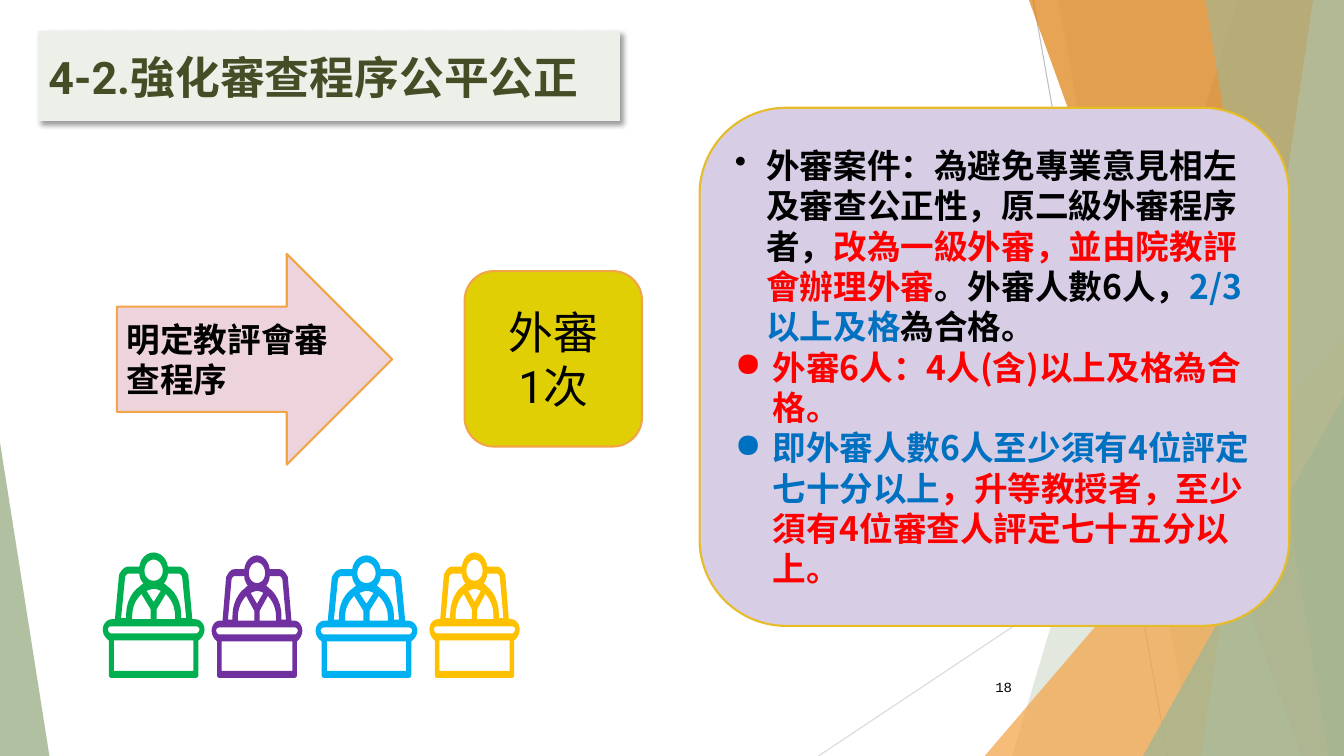
"""Builds the slide on fair procedure for external reviews."""
from lxml.etree import SubElement
from pptx import Presentation
from pptx.dml.color import RGBColor
from pptx.enum.shapes import MSO_CONNECTOR, MSO_SHAPE
from pptx.enum.text import MSO_ANCHOR, MSO_AUTO_SIZE, PP_ALIGN
from pptx.oxml.ns import qn
from pptx.util import Pt

WIDTH, HEIGHT = 960, 540
COLORS = {
    "black": "000000", "red": "FF0000", "blue": "0070C0", "olive": "444D26",
    "sage": "A5B592", "pale sage": "C9D3BE", "amber": "F3A447", "orange": "DD7E0E",
    "mist": "EDF0E9", "pink": "ECD3DC", "mustard": "DFCF04", "lilac": "D7CEE6",
    "gold": "E7BC29", "grey": "BFBFBF", "light grey": "D9D9D9",
    "green": "00B050", "purple": "7030A0", "sky": "00B0F0", "yellow": "FFC000",
}
RAYS = [("grey", 738, 0, 834, 540), ("light grey", 960, 290.2, 584.6, 540)]
BACKDROP = [
    ("slice", "sage", 30, (884, 723)),
    ("slice", "sage", 20, (756, 852)),
    ("triangle", "amber", 72, (703.4, 239.8, 256.6, 300.2, 1)),
    ("slice", "orange", 70, (735, 929.5)),
    ("slice", "pale sage", 70, (938, 858)),
    ("slice", "sage", 65, (861, 949)),
    ("triangle", "sage", 80, (816.5, 283, 143.5, 257, 1)),
    ("triangle", "sage", 85, (0, 316, 35.3, 224, 0)),
]
TITLE = "4-2.強化審查程序公平公正"
TITLE_BOX = (27.4, 22.3, 415.4, 64.1)
PAGE = "18"
PAGE_BOX = (676, 476, 54, 28.8)
SC, JP, ROBOTO = "Noto Sans CJK SC", "Noto Sans CJK JP", "Roboto"
STEP = [("", 0, [("明定教評會審查程序", "black")])]
REVIEW = [("", 0, [("外審", "black")]), ("", 0, [("1次", "black")])]
RULES = [
    ("•", 22.5, [
        ("外審案件：為避免專業意見相左及審查公正性，原二級外審程序者，", "black"),
        ("改為一級外審，並由院教評會辦理外審", "red"),
        ("。外審人數6人，", "black"),
        ("2/3以上及格", "blue"),
        ("為合格。", "black")]),
    ("●", 27, [("外審6人：4人(含)以上及格為合格。", "red")]),
    ("●", 27, [
        ("即外審人數6人至少須有4位評定七十分以上", "blue"),
        ("，升等教授者，至少須有4位審查人評定七十五分以上。", "red")]),
]
PANELS = [
    (MSO_SHAPE.RIGHT_ARROW, (83.5, 181.4, 196.6, 150.5), "pink", "amber",
     STEP, 24, JP, True, PP_ALIGN.LEFT),
    (MSO_SHAPE.ROUNDED_RECTANGLE, (331.9, 193.7, 126.7, 125.3), "mustard", "amber",
     REVIEW, 32, ROBOTO, False, PP_ALIGN.CENTER),
    (MSO_SHAPE.ROUNDED_RECTANGLE, (499.7, 77, 421.2, 370.1), "lilac", "gold",
     RULES, 24, SC, True, PP_ALIGN.LEFT),
]
REVIEWERS = [
    ("green", (73.4, 394.6, 72.7, 89.6)), ("purple", (151.2, 396.7, 64.8, 87.5)),
    ("yellow", (306.7, 394.6, 64.5, 89.6)), ("sky", (225.4, 396.7, 72.7, 87.5)),
]
ICON_WIDTH, ICON_HEIGHT = 100, 124
CHAIR = [(36, 21), (36, 25, 38, 28, 40, 31), (39, 31, 38, 32, 37, 33),
         (29, 38, 23, 49, 23, 61), (23, 65), (18, 65), (22, 24),
         (23, 22, 24, 21, 25, 21)]
SLEEVE = [(38, 41), (47, 56), (47, 66), (29, 66), (29, 62), (29, 53, 33, 46, 38, 41)]
HEAD = [(50, 7), (55, 7, 59, 12, 59, 18), (59, 24, 55, 28, 50, 28),
        (45, 28, 41, 24, 41, 18), (41, 12, 45, 7, 50, 7)]
COLLAR = [(50, 36), (53, 36, 55, 37, 57, 38), (50, 49), (43, 38), (46, 37, 48, 36, 50, 36)]
DESKTOP = [(92, 73), (93, 73, 95, 74, 95, 76), (95, 78, 93, 80, 92, 80),
           (8, 80), (7, 80, 5, 78, 5, 76), (5, 74, 7, 73, 8, 73)]
DESK = [(89, 87), (89, 117), (11, 117), (11, 87)]
LEFT_OUTLINE = [(50, 0), (43, 0, 37, 6, 36, 14), (25, 14), (21, 14, 18, 18, 16, 22),
                (12, 66), (9, 66), (4, 66, 0, 71, 0, 76), (0, 81, 3, 85, 6, 87),
                (6, 121), (6, 123, 7, 124, 9, 124)]


def color(name):
    return RGBColor.from_string(COLORS[name])


def place(shape, box):
    shape.left, shape.top, shape.width, shape.height = map(Pt, box)


def paint(shape, fill, alpha=100):
    shape.shadow.inherit = False
    shape.fill.solid()
    shape.fill.fore_color.rgb = color(fill)
    shape.line.fill.background()
    if alpha < 100:
        tint = shape._element.spPr.find(".//" + qn("a:srgbClr"))
        SubElement(tint, qn("a:alpha"), val=str(alpha * 1000))


def style(run, size, face, ink, bold=False):
    run.font.size, run.font.name, run.font.bold = Pt(size), face, bold
    run.font.color.rgb = color(ink)
    east_asian = SC if face == ROBOTO else face
    run.font._element.find(qn("a:latin")).addnext(
        run.font._element.makeelement(qn("a:ea"), typeface=east_asian))


def flatten(contour, steps=6):
    points = [contour[0]]
    for segment in contour[1:]:
        if len(segment) == 2:
            points.append(segment)
            continue
        curve = (points[-1], segment[:2], segment[2:4], segment[4:])
        for step in range(1, steps + 1):
            t = step / steps
            weights = ((1 - t) ** 3, 3 * t * (1 - t) ** 2, 3 * t * t * (1 - t), t ** 3)
            points.append(tuple(sum(w * p[axis] for w, p in zip(weights, curve))
                                for axis in (0, 1)))
    return points


def mirror(points):
    return [(ICON_WIDTH - x, y) for x, y in points]


def draw_outline(slide, contours):
    contours = [[(Pt(x), Pt(y)) for x, y in contour] for contour in contours]
    builder = slide.shapes.build_freeform(*contours[0][0], scale=1.0)
    builder.add_line_segments(contours[0][1:], close=True)
    for contour in contours[1:]:
        builder.move_to(*contour[0])
        builder.add_line_segments(contour[1:], close=True)
    return builder.convert_to_shape()


def draw_backdrop(slide):
    for ink, *ends in RAYS:
        ray = slide.shapes.add_connector(MSO_CONNECTOR.STRAIGHT, *map(Pt, ends))
        ray.line.color.rgb = color(ink)
        ray.line.width = Pt(0.75)
        SubElement(ray._element.spPr, qn("a:effectLst"))
    for kind, fill, alpha, geometry in BACKDROP:
        if kind == "slice":
            top, bottom = geometry
            part = draw_outline(slide, [[(top, 0), (WIDTH, 0), (WIDTH, HEIGHT), (bottom, HEIGHT)]])
        else:
            *box, peak = geometry
            part = slide.shapes.add_shape(MSO_SHAPE.ISOSCELES_TRIANGLE, *map(Pt, box))
            part.adjustments[0] = peak
        paint(part, fill, alpha)


def draw_title(slide):
    title = slide.shapes.title
    place(title, TITLE_BOX)
    paint(title, "mist")
    effects = title._element.spPr.find(qn("a:effectLst"))
    shadow = SubElement(effects, qn("a:outerShdw"), blurRad=str(Pt(4)), dist=str(Pt(3)),
                        dir="2700000", algn="tl", rotWithShape="0")
    SubElement(SubElement(shadow, qn("a:srgbClr"), val=COLORS["black"]),
               qn("a:alpha"), val="40000")
    frame = title.text_frame
    frame.text = TITLE
    frame.auto_size, frame.vertical_anchor = MSO_AUTO_SIZE.NONE, MSO_ANCHOR.MIDDLE
    frame.paragraphs[0].alignment = PP_ALIGN.LEFT
    style(frame.paragraphs[0].runs[0], 32, ROBOTO, "olive", True)


def draw_page(slide):
    frame = slide.shapes.add_textbox(*map(Pt, PAGE_BOX)).text_frame
    frame.word_wrap, frame.vertical_anchor = True, MSO_ANCHOR.MIDDLE
    frame.text = PAGE
    frame.paragraphs[0].alignment = PP_ALIGN.RIGHT
    style(frame.paragraphs[0].runs[0], 10, "Courier New", "black")


def draw_panel(slide, preset, box, fill, edge, content, size, face, bold, align):
    panel = slide.shapes.add_shape(preset, *map(Pt, box))
    paint(panel, fill)
    panel.line.color.rgb = color(edge)
    panel.line.width = Pt(1.5)
    frame = panel.text_frame
    frame.word_wrap, frame.vertical_anchor = True, MSO_ANCHOR.MIDDLE
    for index, (bullet, indent, pieces) in enumerate(content):
        paragraph = frame.add_paragraph() if index else frame.paragraphs[0]
        paragraph.alignment, paragraph.line_spacing = align, Pt(size * 1.2)
        if bullet:
            properties = paragraph._p.get_or_add_pPr()
            properties.set("marL", str(Pt(indent)))
            properties.set("indent", str(-Pt(indent)))
            SubElement(properties, qn("a:buChar"), char=bullet)
        for text, ink in pieces:
            run = paragraph.add_run()
            run.text = text
            style(run, size, face, ink, bold)


def draw_reviewers(slide):
    chair, sleeve, left = map(flatten, (CHAIR, SLEEVE, LEFT_OUTLINE))
    contours = [left + mirror(left)[:0:-1], chair, mirror(chair), sleeve, mirror(sleeve),
                *map(flatten, (HEAD, COLLAR, DESKTOP, DESK))]
    for fill, (left_edge, top, width, height) in REVIEWERS:
        scaled = [[(left_edge + x * width / ICON_WIDTH, top + y * height / ICON_HEIGHT)
                   for x, y in contour] for contour in contours]
        paint(draw_outline(slide, scaled), fill)


def main():
    deck = Presentation()
    deck.slide_width, deck.slide_height = Pt(WIDTH), Pt(HEIGHT)
    slide = deck.slides.add_slide(deck.slide_layouts[5])
    draw_backdrop(slide)
    draw_title(slide)
    draw_page(slide)
    for panel in PANELS:
        draw_panel(slide, *panel)
    draw_reviewers(slide)
    deck.save("out.pptx")


if __name__ == "__main__":
    main()
